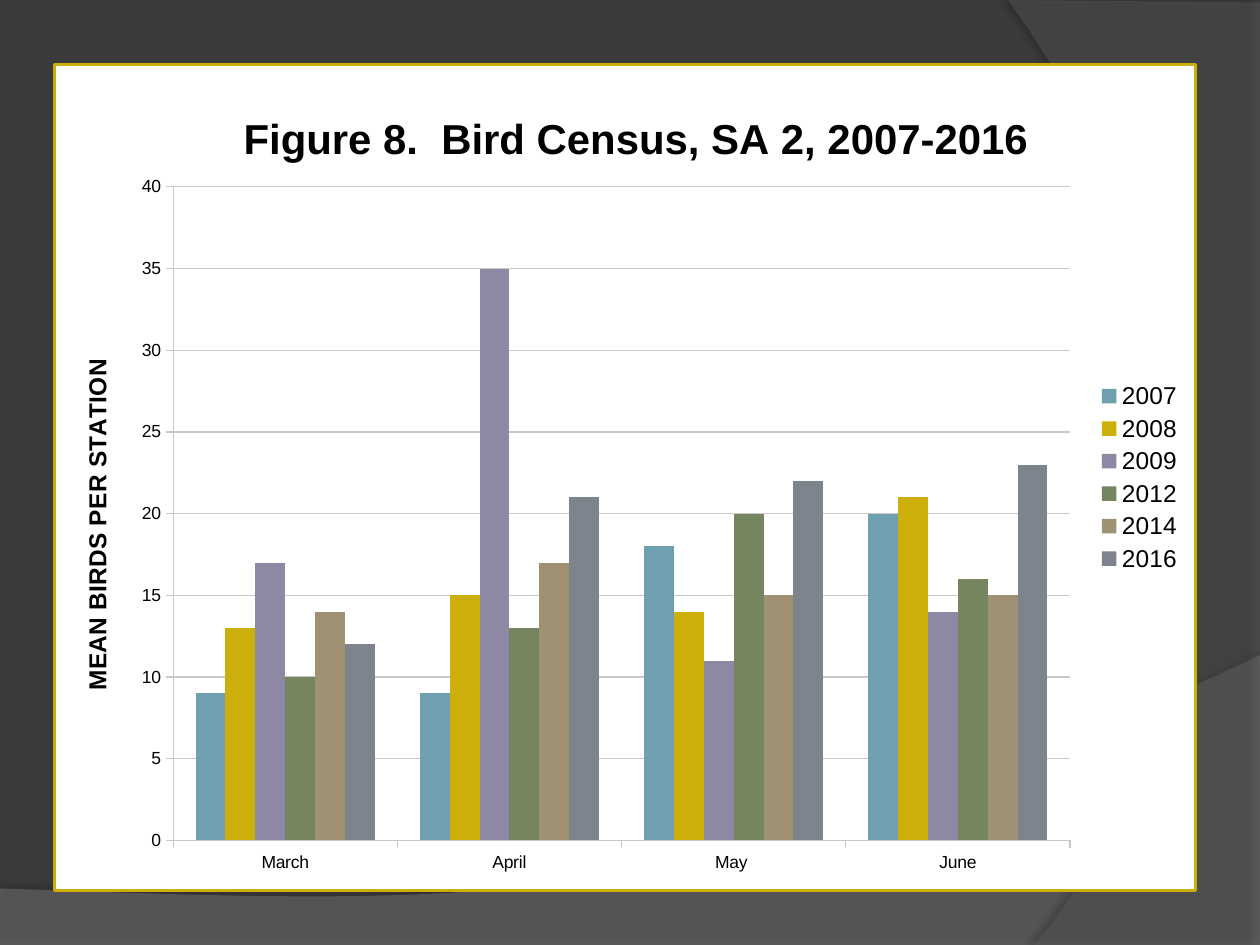
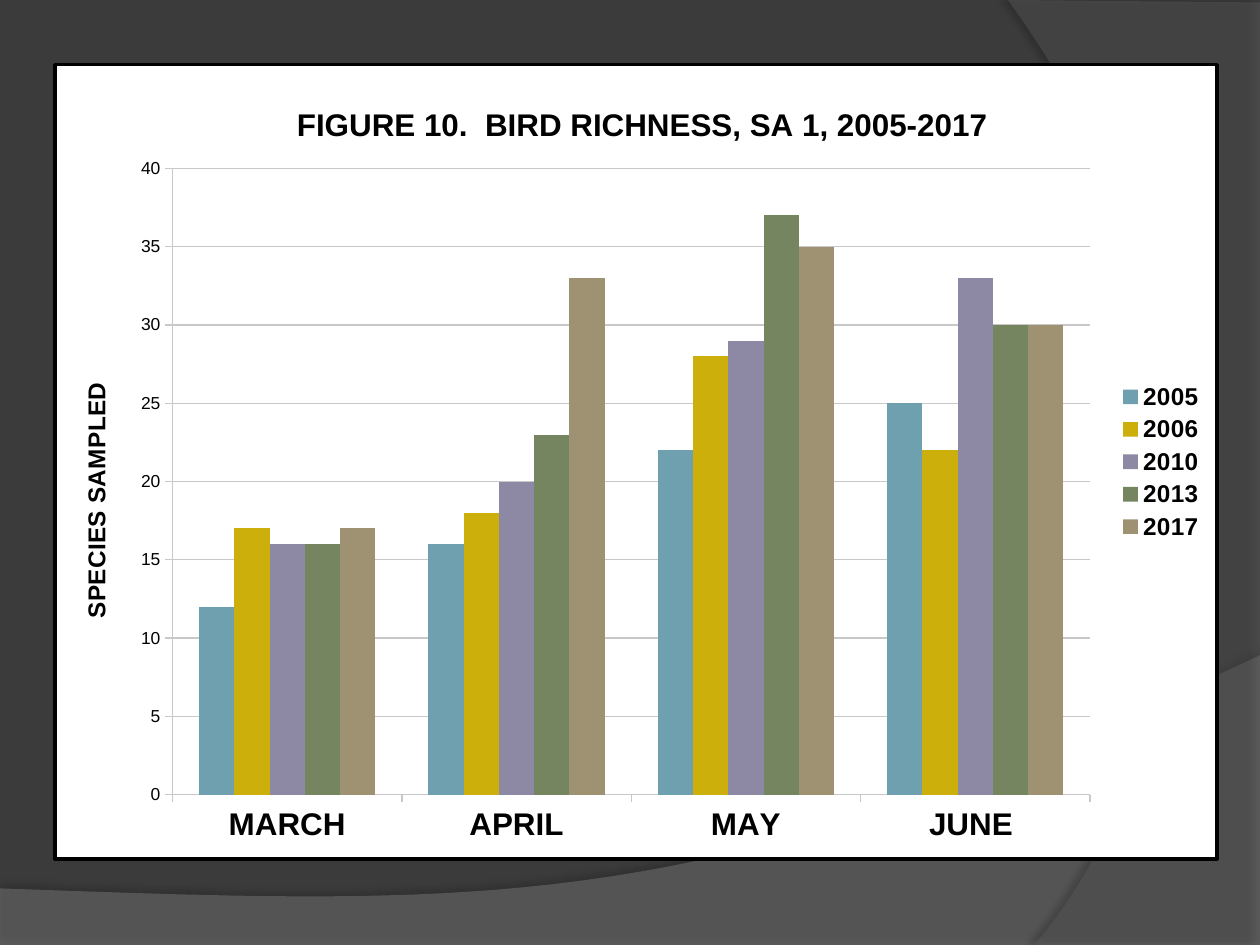
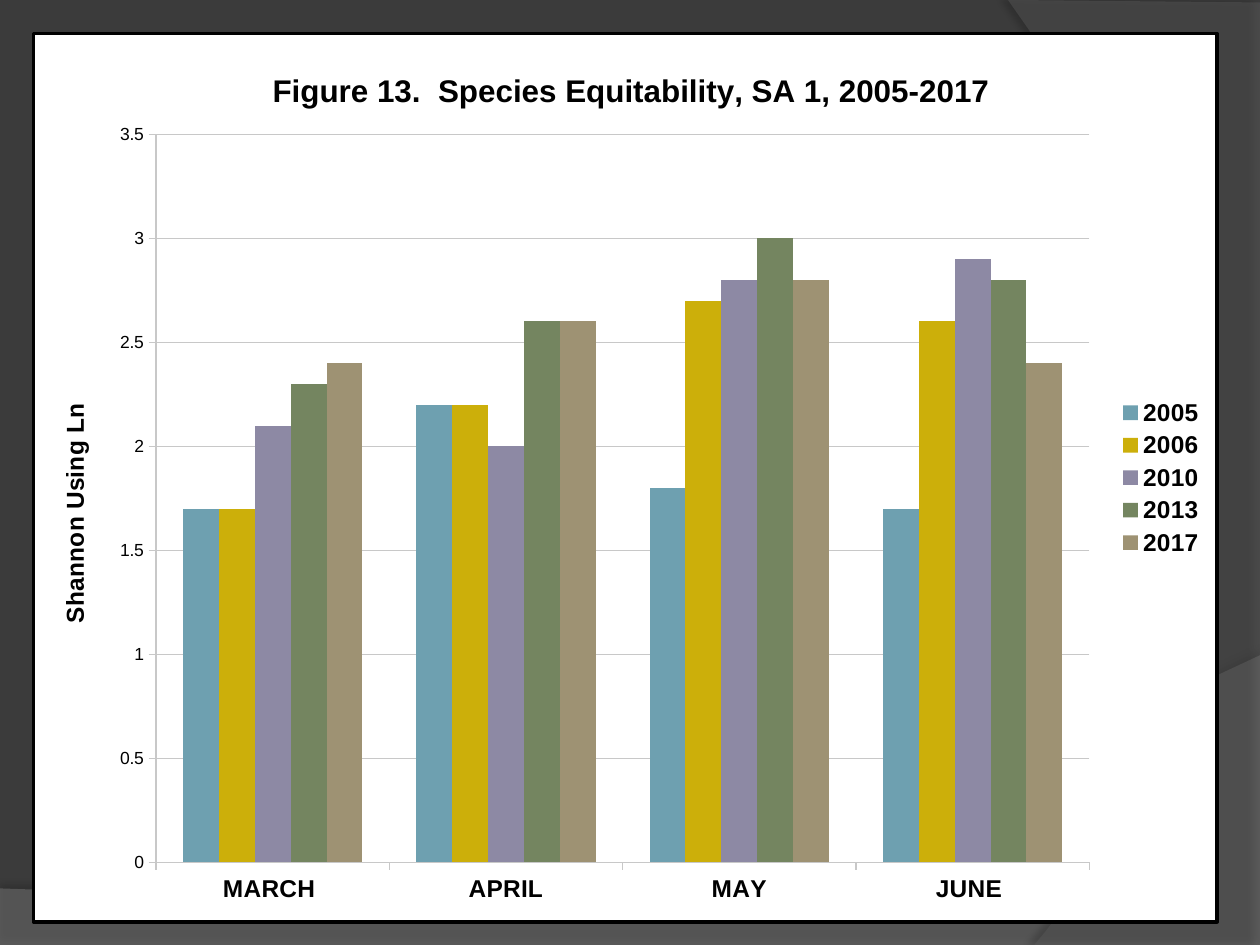
"""Build three slides of clustered column charts about a bird census."""
from dataclasses import dataclass

from pptx import Presentation
from pptx.chart.data import CategoryChartData
from pptx.dml.color import RGBColor
from pptx.enum.chart import XL_CHART_TYPE, XL_LEGEND_POSITION, XL_TICK_MARK
from pptx.oxml import parse_xml
from pptx.oxml.ns import nsdecls, qn
from pptx.util import Cm, Pt

COLUMN_CLUSTERED = XL_CHART_TYPE.COLUMN_CLUSTERED
LEGEND_RIGHT = XL_LEGEND_POSITION.RIGHT
TICK_OUTSIDE = XL_TICK_MARK.OUTSIDE
CURVE_STEPS = 40


@dataclass(frozen=True)
class Theme:
    font: str = "Arial"
    text: str = "000000"
    background: str = "3B3B3B"
    lower_wave: str = "7F7F7F"
    right_wave: str = "5E5E5E"
    panel: str = "FFFFFF"
    gold: str = "CCAF0A"
    black: str = "000000"
    grid: str = "C8C8C8"
    series: tuple = ("6EA0B0", "CCAF0A", "8D89A4", "748560", "9E9273", "7E848D")
    base_size: int = 10
    label_size: int = 14
    heading_size: int = 18
    large_heading_size: int = 24


THEME = Theme()


def format_font(font, size, bold=False):
    font.name = THEME.font
    font.size = Pt(size)
    font.bold = bold
    font.color.rgb = RGBColor.from_string(THEME.text)


def write_title(title, text, *, size, bold=True):
    title.text_frame.text = text
    format_font(title.text_frame.paragraphs[0].runs[0].font, size, bold)


waves = [
    {
        "color": THEME.lower_wave, "opacity": 45,
        "corners": [(0, 17.91), (0, 19.05), (25.4, 19.05), (25.4, 13.21)],
        "curve": [(25.4, 13.21), (14.2, 18.52), (9.93, 18.26), (0, 17.91)],
        "shadow_opacity": 35, "shadow_distance": 3.5, "shadow_angle": 270,
    },
    {
        "color": THEME.right_wave, "opacity": 40,
        "corners": [(25.4, 0.05), (25.4, 19.05), (20.85, 19.05)],
        "curve": [(20.85, 19.05), (23.75, 15.72), (25.86, 7.62), (20.32, 0)],
        "shadow_opacity": 45, "shadow_distance": 4, "shadow_angle": 180,
    },
]

figures = [
    {
        "title": "Figure 8.  Bird Census, SA 2, 2007-2016",
        "title_size": THEME.large_heading_size,
        "axis_title": "MEAN BIRDS PER STATION",
        "months": ["March", "April", "May ", "June"],
        "month_size": THEME.base_size, "bold_labels": False,
        "box": (1.07, 1.27, 23.06, 16.71), "border": (THEME.gold, 1.5),
        "title_corner": (4.74, 2.08), "plot_box": (3.47, 3.75, 18.12, 13.22),
        "maximum": 40, "step": 5,
        "years": {
            "2007": [9, 9, 18, 20],
            "2008": [13, 15, 14, 21],
            "2009": [17, 35, 11, 14],
            "2012": [10, 13, 20, 16],
            "2014": [14, 17, 15, 15],
            "2016": [12, 21, 22, 23],
        },
    },
    {
        "title": "FIGURE 10.  BIRD RICHNESS, SA 1, 2005-2017",
        "title_size": THEME.heading_size,
        "axis_title": "SPECIES SAMPLED",
        "months": ["MARCH", "APRIL", "MAY", "JUNE "],
        "month_size": THEME.heading_size, "bold_labels": True,
        "box": (1.07, 1.27, 23.5, 16.08), "border": (THEME.black, 2),
        "title_corner": (5.85, 1.94), "plot_box": (3.45, 3.37, 18.55, 12.68),
        "maximum": 40, "step": 5,
        "years": {
            "2005": [12, 16, 22, 25],
            "2006": [17, 18, 28, 22],
            "2010": [16, 20, 29, 33],
            "2013": [16, 23, 37, 30],
            "2017": [17, 33, 35, 30],
        },
    },
    {
        "title": "Figure 13.  Species Equitability, SA 1, 2005-2017",
        "title_size": THEME.heading_size,
        "axis_title": "Shannon Using Ln",
        "months": ["MARCH ", "APRIL", "MAY", "JUNE "],
        "month_size": THEME.label_size, "bold_labels": True,
        "box": (0.64, 0.64, 23.93, 17.98), "border": (THEME.black, 2),
        "title_corner": (5.36, 1.27), "plot_box": (3.12, 2.68, 18.87, 14.74),
        "maximum": 3.5, "step": 0.5,
        "years": {
            "2005": [1.7, 2.2, 1.8, 1.7],
            "2006": [1.7, 2.2, 2.7, 2.6],
            "2010": [2.1, 2, 2.8, 2.9],
            "2013": [2.3, 2.6, 3, 2.8],
            "2017": [2.4, 2.6, 2.8, 2.4],
        },
    },
]

presentation = Presentation()
presentation.slide_width = Cm(25.4)
presentation.slide_height = Cm(19.05)
blank_layout = presentation.slide_layouts[6]
master_fill = presentation.slide_master.background.fill
master_fill.solid()
master_fill.fore_color.rgb = RGBColor.from_string(THEME.background)

for figure in figures:
    slide = presentation.slides.add_slide(blank_layout)

    for wave in waves:
        points = list(wave["corners"])
        for step in range(1, CURVE_STEPS + 1):
            t = step / CURVE_STEPS
            weights = ((1 - t) ** 3, 3 * t * (1 - t) ** 2, 3 * t ** 2 * (1 - t), t ** 3)
            points.append(tuple(
                sum(weight * point[axis] for weight, point in zip(weights, wave["curve"]))
                for axis in (0, 1)
            ))
        start, *outline = [(Cm(x), Cm(y)) for x, y in points]
        builder = slide.shapes.build_freeform(*start)
        builder.add_line_segments(outline, close=True)
        shape = builder.convert_to_shape()
        shape.fill.solid()
        shape.fill.fore_color.rgb = RGBColor.from_string(wave["color"])
        shape.line.fill.background()
        shape.shadow.inherit = False
        properties = shape.element.spPr
        color = properties.find(f"{qn('a:solidFill')}/{qn('a:srgbClr')}")
        color.append(parse_xml(f'<a:alpha {nsdecls("a")} val="{wave["opacity"] * 1000}"/>'))
        properties.find(qn("a:effectLst")).append(parse_xml(
            f'<a:outerShdw {nsdecls("a")} blurRad="{Pt(4)}" dist="{Pt(wave["shadow_distance"])}"'
            f' dir="{wave["shadow_angle"] * 60000}" rotWithShape="0">'
            f'<a:srgbClr val="{THEME.black}"><a:alpha val="{wave["shadow_opacity"] * 1000}"/>'
            "</a:srgbClr></a:outerShdw>"
        ))

    chart_data = CategoryChartData()
    chart_data.categories = figure["months"]
    for year, values in figure["years"].items():
        chart_data.add_series(year, values)
    left, top, width, height = figure["box"]
    chart = slide.shapes.add_chart(
        COLUMN_CLUSTERED, Cm(left), Cm(top), Cm(width), Cm(height), chart_data
    ).chart
    format_font(chart.font, THEME.base_size)
    border_color, border_width = figure["border"]
    chart.element.find(qn("c:txPr")).addprevious(parse_xml(
        f'<c:spPr {nsdecls("c", "a")}>'
        f'<a:solidFill><a:srgbClr val="{THEME.panel}"/></a:solidFill>'
        f'<a:ln w="{Pt(border_width)}"><a:solidFill><a:srgbClr val="{border_color}"/>'
        "</a:solidFill></a:ln></c:spPr>"
    ))

    chart.has_title = True
    write_title(chart.chart_title, figure["title"], size=figure["title_size"])
    chart.chart_title.include_in_layout = False
    chart.has_legend = True
    chart.legend.position = LEGEND_RIGHT
    chart.legend.include_in_layout = False
    format_font(chart.legend.font, THEME.label_size, figure["bold_labels"])

    title_element = chart.chart_title.element
    plot_element = next(chart.element.iter(qn("c:plotArea")))
    for owner, area, target, position in (
        (title_element, figure["title_corner"], "", 1),
        (plot_element, figure["plot_box"], '<c:layoutTarget val="inner"/>', 0),
    ):
        for old_layout in owner.findall(qn("c:layout")):
            owner.remove(old_layout)
        x, y, *size = area
        fractions = [(x - left) / width, (y - top) / height]
        fractions += [length / whole for length, whole in zip(size, (width, height))]
        places = "".join(
            f'<c:{name} val="{fraction:.4f}"/>' for name, fraction in zip("xywh", fractions)
        )
        owner.insert(position, parse_xml(
            f'<c:layout {nsdecls("c")}><c:manualLayout>{target}'
            f'<c:xMode val="edge"/><c:yMode val="edge"/>{places}</c:manualLayout></c:layout>'
        ))

    value_axis = chart.value_axis
    value_axis.minimum_scale = 0
    value_axis.maximum_scale = figure["maximum"]
    value_axis.major_unit = figure["step"]
    value_axis.has_major_gridlines = True
    write_title(value_axis.axis_title, figure["axis_title"], size=THEME.label_size)
    body = next(value_axis.axis_title.element.iter(qn("a:bodyPr")))
    body.set("rot", "-5400000")
    body.set("vert", "horz")
    format_font(chart.category_axis.tick_labels.font, figure["month_size"], figure["bold_labels"])
    for axis in (value_axis, chart.category_axis):
        axis.major_tick_mark = TICK_OUTSIDE
    for line_owner in (value_axis, chart.category_axis, value_axis.major_gridlines):
        line_owner.format.line.color.rgb = RGBColor.from_string(THEME.grid)
        line_owner.format.line.width = Pt(0.75)

    plot = chart.plots[0]
    plot.gap_width = 150
    plot.overlap = 0
    plot.vary_by_categories = False
    for series, color in zip(plot.series, THEME.series):
        series.format.fill.solid()
        series.format.fill.fore_color.rgb = RGBColor.from_string(color)

presentation.save("out.pptx")
